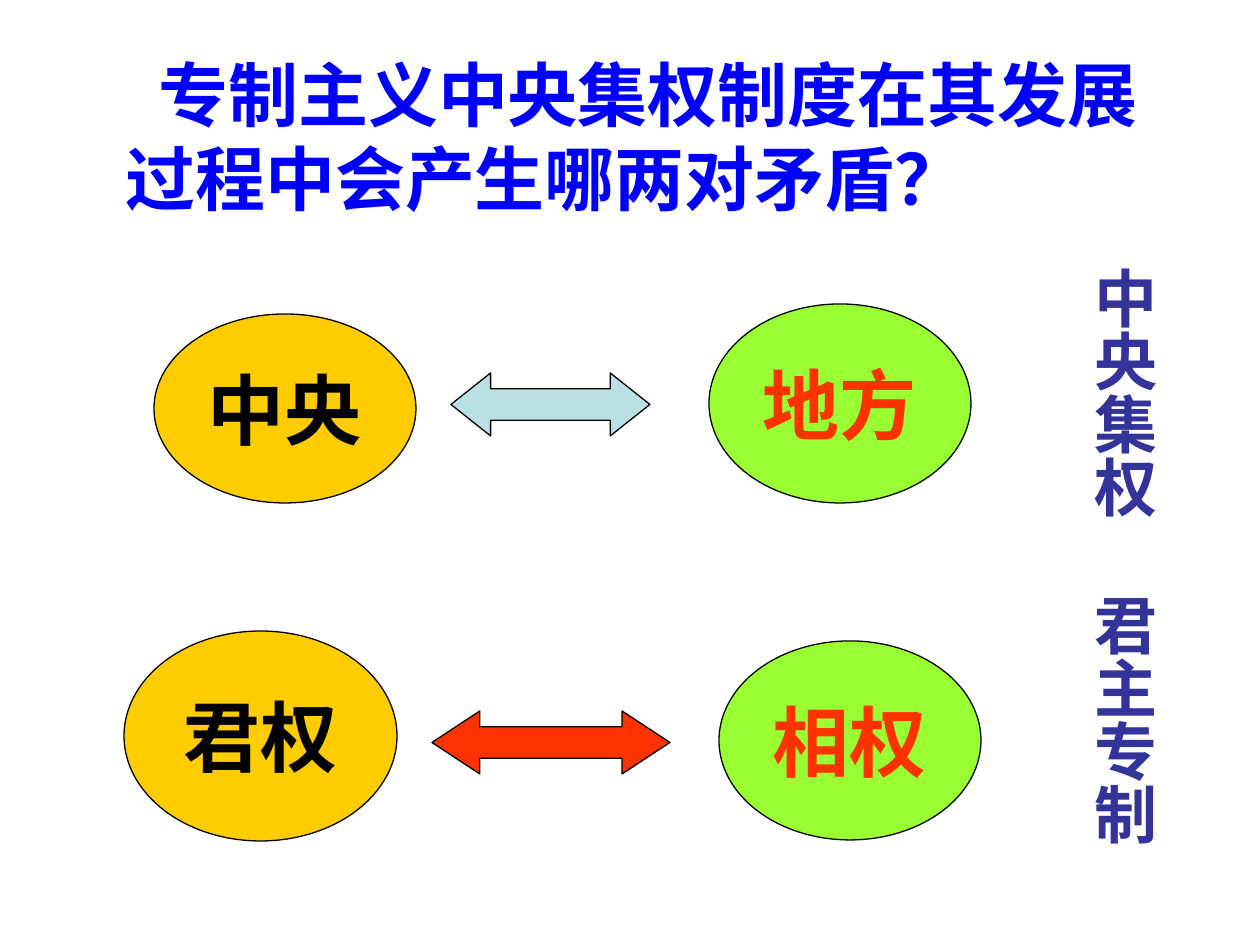
from pptx import Presentation
from pptx.dml.color import RGBColor
from pptx.enum.shapes import MSO_SHAPE
from pptx.enum.text import MSO_ANCHOR, PP_ALIGN
from pptx.oxml.ns import qn
from pptx.util import Pt

PX = 914400 // 126
OVAL = MSO_SHAPE.OVAL
DOUBLE_ARROW = MSO_SHAPE.LEFT_RIGHT_ARROW
MIDDLE = MSO_ANCHOR.MIDDLE
CENTER = PP_ALIGN.CENTER
EAST_ASIAN_FONT = "Noto Sans CJK SC"

BLACK = RGBColor(0x00, 0x00, 0x00)
BLUE = RGBColor(0x00, 0x00, 0xFF)
INDIGO = RGBColor(0x33, 0x33, 0x99)
GOLD = RGBColor(0xFF, 0xCC, 0x00)
GREEN = RGBColor(0x99, 0xFF, 0x33)
RED = RGBColor(0xFF, 0x33, 0x00)
PALE_BLUE = RGBColor(0xBB, 0xE0, 0xE3)

QUESTION = "专制主义中央集权制度在其发展过程中会产生哪两对矛盾？"
QUESTION_BOX = (113, 45, 1050, 180)
QUESTION_INDENT = 33
POWERS = [
    ("中央", (154, 314, 262, 189), GOLD, BLACK),
    ("地方", (709, 304, 262, 199), GREEN, RED),
    ("君权", (124, 631, 273, 210), GOLD, BLACK),
    ("相权", (719, 641, 262, 199), GREEN, RED),
]
CONFLICTS = [
    ((451, 373, 199, 63), PALE_BLUE),
    ((432, 711, 238, 63), RED),
]
ARROWHEAD_SHARE = 0.2
SYSTEMS = [("中央集权", 255), ("君主专制", 582)]
SYSTEM_LEFT, SYSTEM_WIDTH, SYSTEM_HEIGHT = 1067, 101, 297


def to_emu(box):
    return [length * PX for length in box]


def add_text(shape, text, size, font_name, color):
    paragraph = shape.text_frame.paragraphs[0]
    run = paragraph.add_run()
    run.text = text
    run.font.size = Pt(size)
    run.font.bold = True
    run.font.name = font_name
    run.font.color.rgb = color
    east_asian = run.font._element.makeelement(qn("a:ea"), {"typeface": EAST_ASIAN_FONT})
    run.font._element.find(qn("a:latin")).addnext(east_asian)
    return paragraph


def add_filled_shape(slide, kind, box, fill):
    shape = slide.shapes.add_shape(kind, *to_emu(box))
    shape.shadow.inherit = False
    shape.fill.solid()
    shape.fill.fore_color.rgb = fill
    shape.line.color.rgb = BLACK
    shape.line.width = Pt(0.75)
    return shape


def add_question(slide):
    text_box = slide.shapes.add_textbox(*to_emu(QUESTION_BOX))
    text_box.text_frame.word_wrap = True
    paragraph = add_text(text_box, QUESTION, 40, EAST_ASIAN_FONT, BLUE)
    paragraph.line_spacing = Pt(48)
    properties = paragraph._p.get_or_add_pPr()
    properties.set("marL", "0")
    properties.set("indent", str(QUESTION_INDENT * PX))


def add_power(slide, name, box, fill, color):
    oval = add_filled_shape(slide, OVAL, box, fill)
    oval.text_frame.word_wrap = False
    oval.text_frame.vertical_anchor = MIDDLE
    add_text(oval, name, 44, "Times New Roman", color).alignment = CENTER


def add_conflict(slide, box, fill):
    arrow = add_filled_shape(slide, DOUBLE_ARROW, box, fill)
    width, height = box[2:]
    arrow.adjustments[0] = 0.5
    arrow.adjustments[1] = round(ARROWHEAD_SHARE * width / height, 2)


def add_system(slide, name, top):
    box = (SYSTEM_LEFT, top, SYSTEM_WIDTH, SYSTEM_HEIGHT)
    text_box = slide.shapes.add_textbox(*to_emu(box))
    text_box.text_frame.word_wrap = True
    text_box.text_frame._txBody.bodyPr.set("vert", "eaVert")
    add_text(text_box, name, 36, "Arial", INDIGO).alignment = CENTER


def main():
    presentation = Presentation()
    presentation.slide_width, presentation.slide_height = to_emu((1260, 945))
    slide = presentation.slides.add_slide(presentation.slide_layouts[6])
    add_question(slide)
    for power in POWERS:
        add_power(slide, *power)
    for conflict in CONFLICTS:
        add_conflict(slide, *conflict)
    for system in SYSTEMS:
        add_system(slide, *system)
    presentation.save("out.pptx")


if __name__ == "__main__":
    main()
